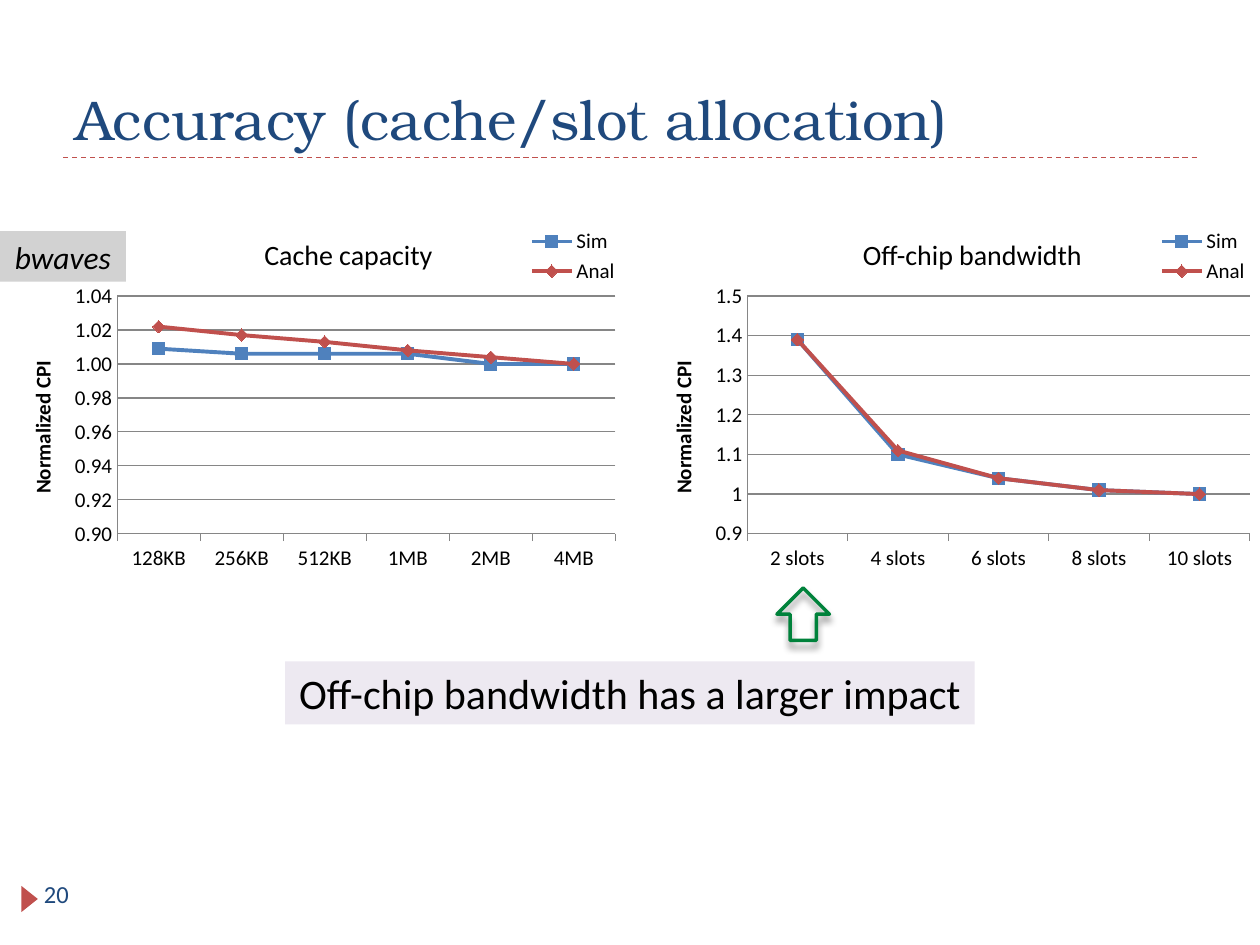
from dataclasses import dataclass

from pptx import Presentation
from pptx.chart.data import CategoryChartData
from pptx.dml.color import RGBColor
from pptx.enum import chart as charts, dml, shapes, text
from pptx.oxml import parse_xml
from pptx.oxml.ns import nsdecls, qn
from pptx.util import Pt


@dataclass(frozen=True)
class Theme:
    title_font: str = "TeX Gyre Bonum"
    body_font: str = "Calibri"
    navy: str = "1F497D"
    red: str = "C0504D"
    blue: str = "4F81BD"
    green: str = "00823B"
    black: str = "000000"
    grey: str = "BFBFBF"
    lilac: str = "E6E0EC"
    grid: str = "868686"
    title: int = 32
    banner: int = 24
    label: int = 18
    caption: int = 16
    number: int = 14
    axis: int = 12


def rgb(code):
    return RGBColor.from_string(code)


def points(*lengths):
    return [Pt(length) for length in lengths]


def manual_layout(x, y, w, h, inner=False):
    target = '<c:layoutTarget val="inner"/>' if inner else ""
    return parse_xml(
        f'<c:layout {nsdecls("c")}><c:manualLayout>{target}'
        '<c:xMode val="edge"/><c:yMode val="edge"/>'
        f'<c:x val="{x}"/><c:y val="{y}"/><c:w val="{w}"/><c:h val="{h}"/>'
        '</c:manualLayout></c:layout>')


class SlideBuilder:
    def __init__(self, page, theme):
        self.page = page
        self.theme = theme

    def set_text(self, box, words, size, color=None, font=None, align=None,
                 anchor=text.MSO_ANCHOR.TOP, italic=None, wrap=True):
        frame = box.text_frame
        frame.word_wrap = wrap
        frame.vertical_anchor = anchor
        para = frame.paragraphs[0]
        para.text = words
        para.alignment = align
        para.font.size = Pt(size)
        para.font.name = font or self.theme.body_font
        para.font.italic = italic
        para.font.color.rgb = rgb(color or self.theme.black)

    def text(self, at, words, size, **style):
        box = self.page.shapes.add_textbox(*points(*at))
        self.set_text(box, words, size, **style)

    def shape(self, kind, at, fill=None, alpha=None, line=None, rotation=0):
        shape = self.page.shapes.add_shape(kind, *points(*at))
        shape.shadow.inherit = False
        shape.rotation = rotation
        if fill:
            shape.fill.solid()
            shape.fill.fore_color.rgb = rgb(fill)
        else:
            shape.fill.background()
        if alpha:
            color = shape.element.spPr.find(qn("a:solidFill"))[0]
            color.append(parse_xml(
                f'<a:alpha {nsdecls("a")} val="{alpha * 1000}"/>'))
        if line:
            shape.line.color.rgb = rgb(line)
            shape.line.width = Pt(2)
        else:
            shape.line.fill.background()
        return shape

    def label(self, at, words, size, fill, **style):
        box = self.shape(shapes.MSO_SHAPE.RECTANGLE, at, fill, alpha=70)
        self.set_text(box, words, size, align=text.PP_ALIGN.CENTER,
                      anchor=text.MSO_ANCHOR.MIDDLE, **style)

    def arrow(self, at):
        arrow = self.shape(shapes.MSO_SHAPE.UP_ARROW, at, line=self.theme.green)
        effects = arrow.element.spPr.find(qn("a:effectLst"))
        effects.append(parse_xml(
            f'<a:outerShdw {nsdecls("a")} blurRad="{Pt(4)}" dist="{Pt(3.4)}" '
            'dir="5400000" rotWithShape="0"><a:srgbClr val="000000">'
            '<a:alpha val="40000"/></a:srgbClr></a:outerShdw>'))

    def dashed_line(self, *ends):
        line = self.page.shapes.add_connector(
            shapes.MSO_CONNECTOR.STRAIGHT, *points(*ends))
        line.line.color.rgb = rgb(self.theme.red)
        line.line.width = Pt(0.75)
        line.line.dash_style = dml.MSO_LINE.DASH
        line.element.spPr.append(parse_xml(f'<a:effectLst {nsdecls("a")}/>'))

    def line_chart(self, at, categories, series, top, step, number_format,
                   plot_width):
        theme = self.theme
        data = CategoryChartData()
        data.categories = categories
        for name, values in series.items():
            data.add_series(name, values)
        chart = self.page.shapes.add_chart(
            charts.XL_CHART_TYPE.LINE_MARKERS, *points(*at), data).chart
        chart.has_title = False
        chart.font.name = theme.body_font
        chart.font.size = Pt(theme.axis)
        chart.font.color.rgb = rgb(theme.black)

        # Axes
        values, names = chart.value_axis, chart.category_axis
        values.minimum_scale, values.maximum_scale = 0.9, top
        values.major_unit = step
        values.major_tick_mark = charts.XL_TICK_MARK.NONE
        values.tick_labels.number_format = number_format
        values.tick_labels.number_format_is_linked = False
        names.major_tick_mark = charts.XL_TICK_MARK.OUTSIDE
        for line in (values.format.line, names.format.line,
                     values.major_gridlines.format.line):
            line.color.rgb = rgb(theme.grid)
            line.width = Pt(0.75)
        frame = values.axis_title.text_frame
        frame.text = "Normalized CPI"
        frame.paragraphs[0].font.size = Pt(theme.axis)
        frame.paragraphs[0].font.bold = True
        chart.element.xpath(".//c:valAx/c:title//a:bodyPr")[0].set(
            "rot", "-5400000")

        # Series
        looks = ((theme.blue, charts.XL_MARKER_STYLE.SQUARE),
                 (theme.red, charts.XL_MARKER_STYLE.DIAMOND))
        plot = chart.plots[0]
        plot.vary_by_categories = False
        for curve, (color, marker) in zip(plot.series, looks):
            curve.smooth = False
            curve.format.line.color.rgb = rgb(color)
            curve.format.line.width = Pt(2.25)
            curve.marker.style = marker
            curve.marker.size = 7
            curve.marker.format.fill.solid()
            curve.marker.format.fill.fore_color.rgb = rgb(color)
            curve.marker.format.line.color.rgb = rgb(color)

        # Legend and plot placement
        chart.has_legend = True
        chart.legend.position = charts.XL_LEGEND_POSITION.RIGHT
        chart.legend.include_in_layout = False
        chart.legend.font.size = Pt(theme.axis)
        root = chart.element
        for old in root.xpath(".//c:plotArea/c:layout | .//c:legend/c:layout"):
            old.getparent().remove(old)
        root.xpath(".//c:plotArea")[0].insert(
            0, manual_layout(0.186, 0.2, plot_width, 0.629, inner=True))
        root.xpath(".//c:legendPos")[0].addnext(
            manual_layout(0.83, 0.01, 0.16, 0.17))


def main():
    deck = Presentation()
    deck.slide_width, deck.slide_height = points(720, 540)
    theme = Theme()
    slide = SlideBuilder(deck.slides.add_slide(deck.slide_layouts[6]), theme)

    # Title and page number
    slide.dashed_line(36, 90, 684, 90)
    slide.shape(shapes.MSO_SHAPE.ISOSCELES_TRIANGLE, (9.4, 509, 15, 9.4),
                theme.red, rotation=90)
    slide.text((36, 12, 648, 78), "Accuracy (cache/slot allocation)",
               theme.title, color=theme.navy, font=theme.title_font,
               anchor=text.MSO_ANCHOR.BOTTOM)
    slide.text((18, 499, 156, 29), "20", theme.number, color=theme.navy)

    # Charts
    slide.line_chart(
        (0, 126, 360, 216), ("128KB", "256KB", "512KB", "1MB", "2MB", "4MB"),
        {"Sim": (1.009, 1.006, 1.006, 1.006, 1, 1),
         "Anal": (1.022, 1.017, 1.013, 1.008, 1.004, 1)},
        top=1.04, step=0.02, number_format="0.00", plot_width=0.791)
    slide.line_chart(
        (360, 126, 360, 216), [f"{count} slots" for count in range(2, 11, 2)],
        {"Sim": (1.39, 1.1, 1.04, 1.01, 1),
         "Anal": (1.39, 1.11, 1.04, 1.01, 1)},
        top=1.5, step=0.1, number_format="General", plot_width=0.798)

    # Labels and conclusion
    slide.label((0, 132, 72, 29), "bwaves", theme.label, theme.grey,
                italic=True)
    slide.label((163, 378, 394, 36), "Off-chip bandwidth has a larger impact",
                theme.banner, theme.lilac, wrap=False)
    slide.text((144, 132, 114, 27), "Cache capacity", theme.caption)
    slide.text((486, 132, 150, 27), "Off-chip bandwidth", theme.caption)
    slide.arrow((444, 336, 30, 30))

    deck.save("out.pptx")


if __name__ == "__main__":
    main()
